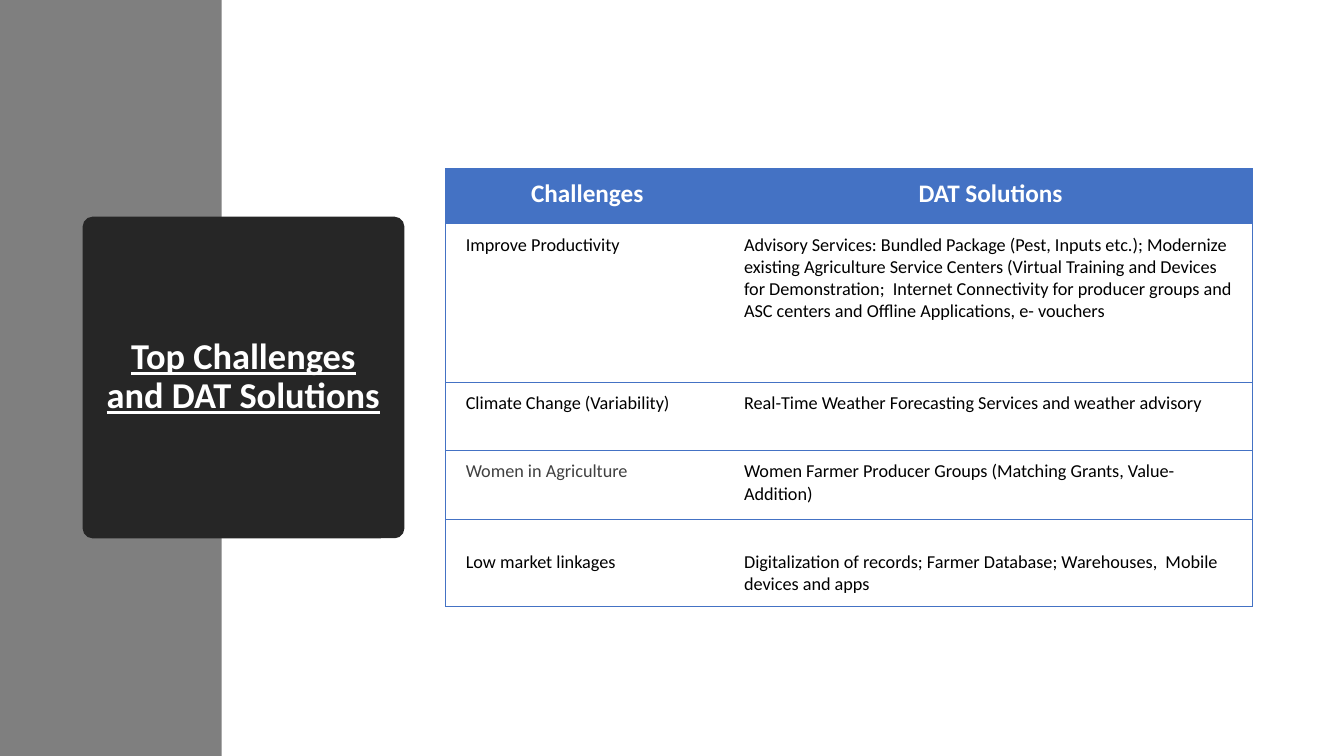
from lxml import etree
from pptx import Presentation
from pptx.dml.color import RGBColor
from pptx.enum.shapes import MSO_SHAPE
from pptx.enum.text import MSO_ANCHOR, PP_ALIGN
from pptx.oxml.ns import qn
from pptx.util import Inches, Pt

RECTANGLE = MSO_SHAPE.RECTANGLE
ROUNDED = MSO_SHAPE.ROUNDED_RECTANGLE
MIDDLE = MSO_ANCHOR.MIDDLE
CENTER, LEFT = PP_ALIGN.CENTER, PP_ALIGN.LEFT

FONT = "Calibri"
GREY, DARK, BLUE = "7F7F7F", "262626", "4472C4"
WHITE, BLACK, SOFT_BLACK = "FFFFFF", "000000", "404040"

COLUMN_WIDTHS = [2.76, 5.24]
ROW_HEIGHTS = [0.55, 1.57, 0.68, 0.68, 0.87]
ROWS = [
    ("Challenges", "DAT Solutions"),
    ("Improve Productivity",
     "Advisory Services: Bundled Package (Pest, Inputs etc.); Modernize existing "
     "Agriculture Service Centers (Virtual Training and Devices for Demonstration;  "
     "Internet Connectivity for producer groups and ASC centers and Offline "
     "Applications, e- vouchers"),
    ("Climate Change (Variability)",
     "Real-Time Weather Forecasting Services and weather advisory"),
    ("Women in Agriculture",
     "Women Farmer Producer Groups (Matching Grants, Value-Addition)"),
    ("Low market linkages",
     "Digitalization of records; Farmer Database; Warehouses,  Mobile devices and apps"),
]


def color(value):
    """Turn a hex string into a colour."""
    return RGBColor.from_string(value)


def style_text(paragraph, size, text_color, bold, align):
    """Set the font and alignment of a paragraph."""
    paragraph.alignment = align
    paragraph.font.name = FONT
    paragraph.font.size = Pt(size)
    paragraph.font.bold = bold
    paragraph.font.color.rgb = color(text_color)


def add_block(slide, kind, box, fill):
    """Add a plain filled shape in the box."""
    shape = slide.shapes.add_shape(kind, *map(Inches, box))
    shape.shadow.inherit = False
    shape.fill.solid()
    shape.fill.fore_color.rgb = color(fill)
    shape.line.fill.background()
    return shape


def add_title(slide, box):
    """Add the dark title card."""
    card = add_block(slide, ROUNDED, box, DARK)
    card.adjustments[0] = 0.03
    frame = card.text_frame
    frame.word_wrap = True
    frame.vertical_anchor = MIDDLE
    frame.margin_left = frame.margin_right = Inches(0.2)
    paragraph = frame.paragraphs[0]
    paragraph.text = "Top Challenges and DAT Solutions"
    paragraph.line_spacing = 0.9
    style_text(paragraph, 26, WHITE, True, CENTER)
    paragraph.font.underline = True


def set_borders(cell, visible_sides):
    """Draw thin blue lines on the visible sides and clear the others."""
    properties = cell._tc.get_or_add_tcPr()
    for index, side in enumerate("LRTB"):
        line = etree.Element(qn(f"a:ln{side}"), w=str(Pt(0.5)))
        if side in visible_sides:
            fill = etree.SubElement(line, qn("a:solidFill"))
            etree.SubElement(fill, qn("a:srgbClr"), val=BLUE)
        else:
            etree.SubElement(line, qn("a:noFill"))
        properties.insert(index, line)


def fill_cell(cell, text, row, column):
    """Fill in one cell of the challenges table."""
    header = row == 0
    cell.margin_left, cell.margin_right = Inches(0.2), Inches(0.15)
    cell.margin_top = Inches(0.32 if row == len(ROWS) - 1 else 0.1)
    cell.margin_bottom = Inches(0.1)
    cell.fill.solid()
    cell.fill.fore_color.rgb = color(BLUE if header else WHITE)
    set_borders(cell, "LTB" if column == 0 else "RTB")
    paragraph = cell.text_frame.paragraphs[0]
    paragraph.text = text
    if header:
        style_text(paragraph, 18, WHITE, True, CENTER)
    else:
        soft = text == "Women in Agriculture"
        style_text(paragraph, 13, SOFT_BLACK if soft else BLACK, False, LEFT)


def add_challenges_table(slide, left, top):
    """Add the table of challenges and solutions."""
    table = slide.shapes.add_table(
        len(ROWS), len(COLUMN_WIDTHS), Inches(left), Inches(top),
        Inches(sum(COLUMN_WIDTHS)), Inches(sum(ROW_HEIGHTS))).table
    table.horz_banding = False
    for column, width in zip(table.columns, COLUMN_WIDTHS):
        column.width = Inches(width)
    for row, height in zip(table.rows, ROW_HEIGHTS):
        row.height = Inches(height)
    for row, texts in enumerate(ROWS):
        for column, text in enumerate(texts):
            fill_cell(table.cell(row, column), text, row, column)


def main():
    """Build and save the presentation."""
    presentation = Presentation()
    presentation.slide_width = Inches(13.33)
    presentation.slide_height = Inches(7.5)
    slide = presentation.slides.add_slide(presentation.slide_layouts[6])
    add_block(slide, RECTANGLE, (0, 0, 2.2, 7.5), GREY)
    add_title(slide, (0.82, 2.15, 3.19, 3.19))
    add_challenges_table(slide, 4.42, 1.67)
    presentation.save("out.pptx")


if __name__ == "__main__":
    main()
